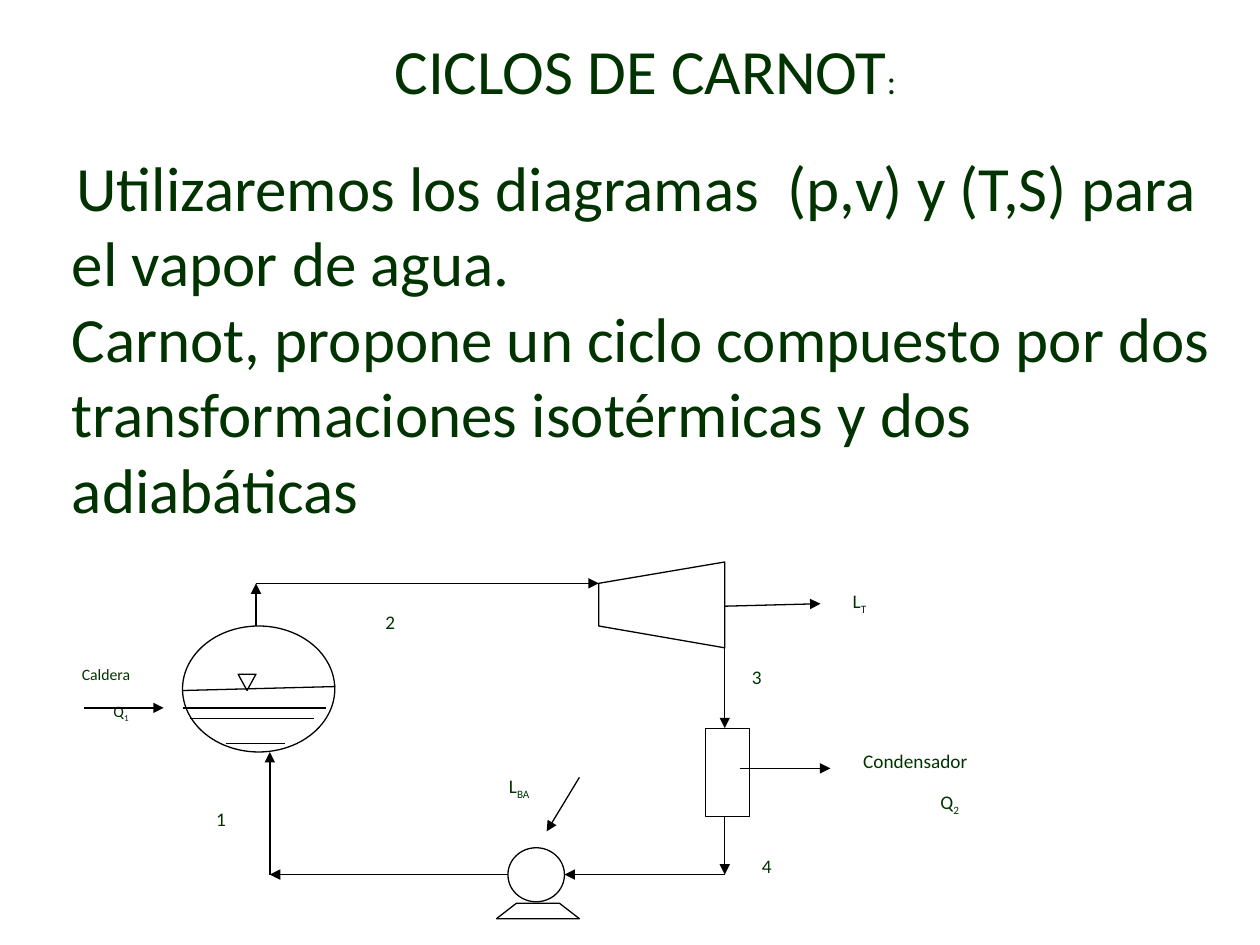
import pptx
import pptx.util
import pptx.dml.color
import pptx.enum.shapes
import pptx.enum.text
import pptx.oxml.ns
import lxml.etree

Cm = pptx.util.Cm
Pt = pptx.util.Pt
SHAPE = pptx.enum.shapes.MSO_SHAPE
ALIGN = pptx.enum.text.PP_ALIGN
ANCHOR = pptx.enum.text.MSO_ANCHOR
COLORS = {"text": "003300", "line": "000000", "fill": "FFFFFF"}


def rgb(name):
    return pptx.dml.color.RGBColor.from_string(COLORS[name])


def add_text(paragraph, text, size=11, subscript=False, align=None, after=0):
    paragraph.alignment = align
    paragraph.space_after = Pt(after)
    run = paragraph.add_run()
    run.text = text
    run.font.name = "Calibri"
    run.font.size = Pt(size)
    run.font.color.rgb = rgb("text")
    if subscript:
        run.font._element.set("baseline", "-25000")


class Diagram:
    line_width = Pt(0.75)

    def __init__(self, slide):
        self.slide = slide

    def frame(self, shape, anchor):
        text_frame = shape.text_frame
        text_frame.word_wrap = True
        text_frame.auto_size = pptx.enum.text.MSO_AUTO_SIZE.NONE
        text_frame.vertical_anchor = anchor
        return text_frame

    def title(self, box, runs):
        heading = self.slide.shapes.title
        heading.left, heading.top, heading.width, heading.height = map(Cm, box)
        paragraph = self.frame(heading, ANCHOR.MIDDLE).paragraphs[0]
        for text, size in runs:
            add_text(paragraph, text, size, align=ALIGN.CENTER)

    def body(self, box, paragraphs):
        area = self.slide.shapes.add_textbox(*map(Cm, box))
        text_frame = self.frame(area, ANCHOR.TOP)
        for index, runs in enumerate(paragraphs):
            paragraph = text_frame.add_paragraph() if index else text_frame.paragraphs[0]
            for text, size in runs:
                add_text(paragraph, text, size)

    def outline(self, shape, line="line"):
        shape.shadow.inherit = False
        shape.fill.solid()
        shape.fill.fore_color.rgb = rgb("fill")
        shape.line.color.rgb = rgb(line)
        shape.line.width = self.line_width
        return shape

    def component(self, kind, box, rotation=0):
        shape = self.outline(self.slide.shapes.add_shape(kind, *map(Cm, box)))
        shape.rotation = rotation

    def polygon(self, points):
        start, *others = [(Cm(x), Cm(y)) for x, y in points]
        builder = self.slide.shapes.build_freeform(*start)
        builder.add_line_segments(others, close=True)
        self.outline(builder.convert_to_shape())

    def label(self, box, lines, size=11):
        shape = self.slide.shapes.add_shape(SHAPE.RECTANGLE, *map(Cm, box))
        text_frame = self.frame(self.outline(shape, "fill"), ANCHOR.TOP)
        for index, (text, subscript) in enumerate(lines):
            paragraph = text_frame.add_paragraph() if index else text_frame.paragraphs[0]
            align = ALIGN.CENTER if index else ALIGN.LEFT
            add_text(paragraph, text, size, align=align, after=10)
            if subscript:
                add_text(paragraph, subscript, size, True, align, 10)

    def line(self, start, end, arrow=False):
        connector = self.slide.shapes.add_connector(
            pptx.enum.shapes.MSO_CONNECTOR.STRAIGHT, *map(Cm, start + end))
        connector.line.color.rgb = rgb("line")
        connector.line.width = self.line_width
        qn = pptx.oxml.ns.qn
        if arrow:
            ln = connector.line._get_or_add_ln()
            lxml.etree.SubElement(ln, qn("a:tailEnd"), type="triangle")
        lxml.etree.SubElement(connector._element.spPr, qn("a:effectLst"))


def main():
    deck = pptx.Presentation()
    deck.slide_width, deck.slide_height = Cm(25.4), Cm(19.05)
    cycle = Diagram(deck.slides.add_slide(deck.slide_layouts[5]))

    cycle.title((1.2, 0.5, 23.62, 1.8), [("CICLOS DE CARNOT", 36), (":", 20)])
    cycle.body((1.2, 2.86, 23.62, 8), [
        [(" ", 11),
         ("Utilizaremos los diagramas  (p,v) y (T,S) para el vapor de agua.", 36)],
        [("Carnot, propone un ciclo compuesto por dos transformaciones "
          "isotérmicas y dos adiabáticas", 36)],
    ])

    cycle.label((1.4, 13.28, 2.08, 2.24), [("Caldera", ""), ("Q", "1")], 9)
    labels = [
        ((4.11, 16.15, 1.04, 0.97), [("1", "")]),
        ((7.52, 12.17, 0.89, 0.86), [("2", "")]),
        ((14.91, 13.28, 1.22, 0.99), [("3", "")]),
        ((15.11, 17.09, 1.22, 1.09), [("4", "")]),
        ((16.94, 11.76, 1.75, 1.3), [("L", "T")]),
        ((10.01, 15.49, 1.7, 1.27), [("L", "BA")]),
        ((17.15, 14.99, 3.99, 2.13), [("Condensador", ""), ("Q", "2")]),
    ]
    for box, lines in labels:
        cycle.label(box, lines)

    cycle.component(SHAPE.OVAL, (3.68, 12.62, 3.07, 2.54))
    cycle.component(SHAPE.ISOSCELES_TRIANGLE, (4.8, 13.59, 0.36, 0.33), 180)
    cycle.component(SHAPE.RECTANGLE, (14.22, 14.68, 0.89, 1.78))
    cycle.component(SHAPE.OVAL, (10.24, 17.09, 1.14, 1.09))
    turbine = [(14.61, 11.33), (12.07, 11.76), (12.07, 12.62), (14.61, 13.06)]
    pump_base = [(11.68, 18.52), (11.28, 18.21), (10.41, 18.21), (10.01, 18.52)]
    cycle.polygon(turbine)
    cycle.polygon(pump_base)

    water_lines = [
        ((3.68, 13.92), (6.76, 13.84)),
        ((3.68, 14.27), (6.58, 14.27)),
        ((3.84, 14.48), (6.32, 14.48)),
        ((4.55, 14.99), (5.74, 14.99)),
    ]
    for start, end in water_lines:
        cycle.line(start, end)

    flows = [
        ((5.16, 12.62), (5.16, 11.76)),
        ((5.16, 11.76), (12.07, 11.76)),
        ((14.61, 13.06), (14.61, 14.68)),
        ((14.61, 16.46), (14.61, 17.63)),
        ((14.61, 17.63), (11.38, 17.63)),
        ((10.24, 17.63), (5.44, 17.63)),
        ((5.44, 17.63), (5.44, 15.16)),
    ]
    energy = [
        ((1.7, 14.27), (3.3, 14.27)),
        ((14.61, 12.22), (16.54, 12.17)),
        ((14.91, 15.49), (16.74, 15.49)),
        ((11.68, 15.67), (11.02, 16.76)),
    ]
    for start, end in flows + energy:
        cycle.line(start, end, arrow=True)

    deck.save("out.pptx")


if __name__ == "__main__":
    main()
